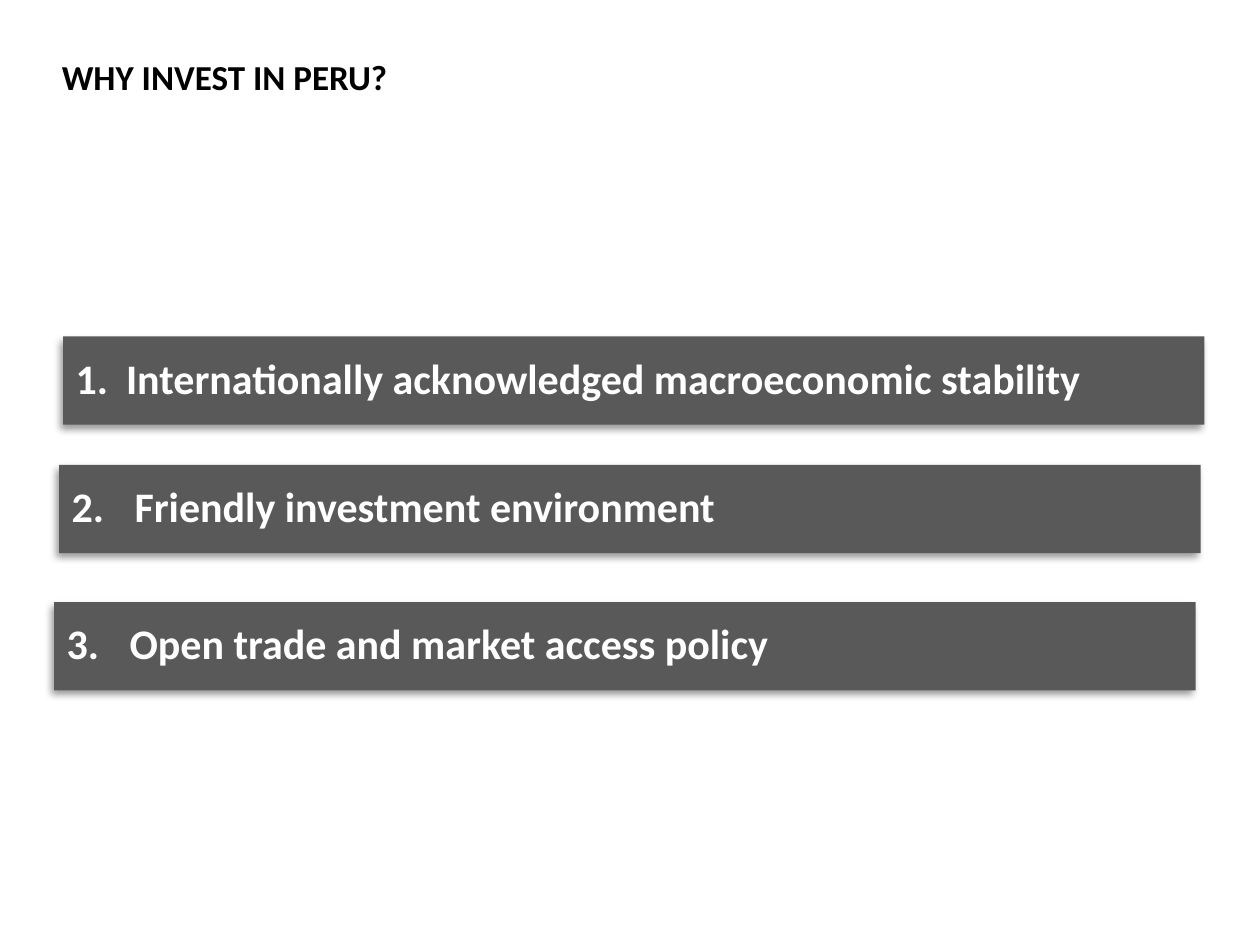
from lxml import etree
from pptx import Presentation
from pptx.dml.color import RGBColor
from pptx.enum.shapes import MSO_SHAPE
from pptx.enum.text import MSO_ANCHOR, MSO_AUTO_SIZE, PP_ALIGN
from pptx.oxml.ns import qn
from pptx.util import Inches, Pt

RECTANGLE = MSO_SHAPE.RECTANGLE
TOP, MIDDLE = MSO_ANCHOR.TOP, MSO_ANCHOR.MIDDLE
NO_FIT = MSO_AUTO_SIZE.NONE
LEFT = PP_ALIGN.LEFT

TITLE = "WHY INVEST IN PERU?"
# reason, left, top, hanging indent
REASONS = [
    ("Internationally acknowledged macroeconomic stability", 0.5, 2.67, 0.4),
    ("Friendly investment environment", 0.47, 3.69, 0.5),
    ("Open trade and market access policy", 0.43, 4.78, 0.5),
]
TITLE_BOX = (0.39, 0.39, 5.08, 0.44)
BAR_SIZE = (9.06, 0.7)

THEME = {
    "font": "Calibri",
    "title_size": 20,
    "reason_size": 24,
    "title": "000000",
    "reason": "FFFFFF",
    "bar": "595959",
    "shadow": "000000",
}


def add_child(parent, tag, **attributes):
    return etree.SubElement(parent, qn(tag), attributes)


def place(shape, box):
    for side, value in zip(("left", "top", "width", "height"), box):
        setattr(shape, side, Inches(value))


def write(shape, text, role, anchor):
    """Put one left-aligned bold paragraph in the shape and return it."""
    frame = shape.text_frame
    frame_format = {"word_wrap": True, "auto_size": NO_FIT, "vertical_anchor": anchor}
    for name, value in frame_format.items():
        setattr(frame, name, value)
    paragraph = frame.paragraphs[0]
    paragraph.alignment = LEFT
    paragraph.space_before = Pt(0)
    run = paragraph.add_run()
    run.text = text
    font_format = {"name": THEME["font"], "size": Pt(THEME[f"{role}_size"]), "bold": True}
    for name, value in font_format.items():
        setattr(run.font, name, value)
    run.font.color.rgb = RGBColor.from_string(THEME[role])
    return paragraph


def number(paragraph, start, indent):
    properties = paragraph._p.get_or_add_pPr()
    properties.set("marL", str(Inches(indent)))
    properties.set("indent", str(-Inches(indent)))
    add_child(add_child(properties, "a:buClr"), "a:srgbClr", val=THEME["reason"])
    add_child(properties, "a:buFont", typeface="+mj-lt")
    add_child(properties, "a:buAutoNum", type="arabicPeriod", startAt=str(start))


def cast_shadow(shape):
    shape.shadow.inherit = False
    effects = shape.element.spPr.find(qn("a:effectLst"))
    shadow = add_child(effects, "a:outerShdw", blurRad=str(Pt(4)), dist=str(Pt(3)),
                       dir=str(135 * 60000), algn="tr", rotWithShape="0")
    color = add_child(shadow, "a:srgbClr", val=THEME["shadow"])
    add_child(color, "a:alpha", val="40000")


def style_bar(bar, reason, position, indent):
    bar.fill.solid()
    bar.fill.fore_color.rgb = RGBColor.from_string(THEME["bar"])
    bar.line.fill.background()
    cast_shadow(bar)
    paragraph = write(bar, reason, "reason", MIDDLE)
    paragraph.line_spacing = 0.9
    number(paragraph, position, indent)


def main():
    presentation = Presentation()
    presentation.slide_width = Inches(10)
    presentation.slide_height = Inches(7.5)
    slide = presentation.slides.add_slide(presentation.slide_layouts[1])
    title, first_bar = slide.placeholders

    place(title, TITLE_BOX)
    write(title, TITLE, "title", TOP)

    for position, (reason, left, top, indent) in enumerate(REASONS, 1):
        box = (left, top, *BAR_SIZE)
        if position == 1:
            bar = first_bar
            place(bar, box)
        else:
            bar = slide.shapes.add_shape(RECTANGLE, *map(Inches, box))
        style_bar(bar, reason, position, indent)

    presentation.save("out.pptx")


if __name__ == "__main__":
    main()
